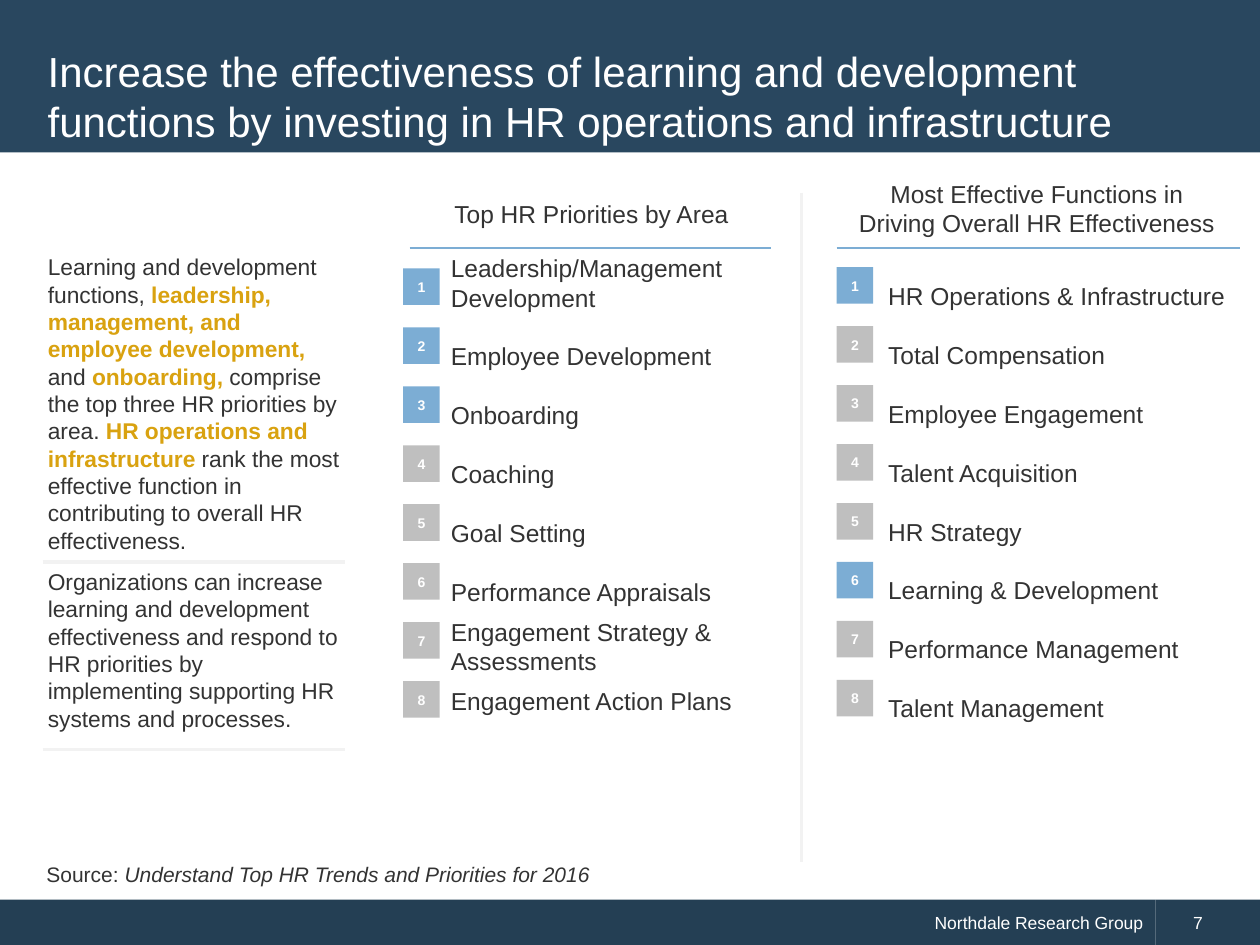
from dataclasses import dataclass

from lxml.etree import SubElement
from pptx import Presentation
from pptx.dml.color import RGBColor
from pptx.enum.shapes import MSO_CONNECTOR, MSO_SHAPE
from pptx.enum.text import MSO_ANCHOR, PP_ALIGN
from pptx.oxml.ns import qn
from pptx.util import Inches, Pt


@dataclass(frozen=True)
class Theme:
    font: str = "Arial"
    banner: str = "29475F"
    footer: str = "243F54"
    accent: str = "7CADD4"
    muted: str = "BFBFBF"
    divider: str = "F2F2F2"
    text: str = "333333"
    highlight: str = "D9A210"
    white: str = "FFFFFF"
    title_size: int = 24
    list_size: int = 14
    body_size: int = 13
    source_size: int = 12
    footer_size: int = 10
    badge_size: int = 8


THEME = Theme()

# Each paragraph is (runs, paragraph format); each run is (text, font format)
PRIORITIES = [
    ("Leadership/Management Development", {}),
    ("Employee Development", {"line_spacing": 2.0}),
    ("Onboarding", {"line_spacing": 2.0}),
    ("Coaching", {"line_spacing": 2.0}),
    ("Goal Setting", {"line_spacing": 2.0}),
    ("Performance Appraisals", {"line_spacing": 2.0, "space_after": Pt(6)}),
    ("Engagement Strategy & Assessments", {"space_after": Pt(6)}),
    ("Engagement Action Plans", {}),
]
FUNCTIONS = [(name, {"line_spacing": 2.0}) for name in (
    "HR Operations & Infrastructure", "Total Compensation",
    "Employee Engagement", "Talent Acquisition", "HR Strategy",
    "Learning & Development", "Performance Management", "Talent Management")]

STRONG = {"bold": True, "color": THEME.highlight}
SUMMARY = [
    ([("Learning and development functions, ", {}),
      ("leadership, management, and employee development, ", STRONG),
      ("and ", {}),
      ("onboarding, ", STRONG),
      ("comprise the top three HR priorities by area.", {}),
      (" HR operations and infrastructure ", STRONG),
      ("rank the most effective function in contributing to overall HR "
       "effectiveness.", {})], {"space_after": Pt(8)}),
    ("Organizations can increase learning and development effectiveness and "
     "respond to HR priorities by implementing supporting HR systems and "
     "processes.", {"space_after": Pt(8)}),
]


def apply_format(target, values):
    for name, value in values.items():
        setattr(target, name, value)


def write_text(shape, paragraphs, size, color=THEME.text, bold=False,
               align=PP_ALIGN.LEFT, anchor=MSO_ANCHOR.TOP, side=0.1,
               wrap=True):
    """Fill a shape with paragraphs; side is the left and right inset."""
    frame = shape.text_frame
    apply_format(frame, {
        "word_wrap": wrap, "vertical_anchor": anchor,
        "margin_left": Inches(side), "margin_right": Inches(side),
        "margin_top": Inches(0.05), "margin_bottom": Inches(0.05)})
    for index, (runs, paragraph_format) in enumerate(paragraphs):
        paragraph = frame.add_paragraph() if index else frame.paragraphs[0]
        apply_format(paragraph, {"alignment": align, **paragraph_format})
        for text, font_format in ([(runs, {})] if isinstance(runs, str) else runs):
            run = paragraph.add_run()
            run.text = text
            values = {"name": THEME.font, "size": Pt(size), "bold": bold,
                      "color": color, **font_format}
            run.font.color.rgb = RGBColor.from_string(values.pop("color"))
            apply_format(run.font, values)


def add_text(slide, box, paragraphs, size, **options):
    shape = slide.shapes.add_textbox(*map(Inches, box))
    write_text(shape, paragraphs, size, **options)


def add_block(slide, box, fill):
    shape = slide.shapes.add_shape(MSO_SHAPE.RECTANGLE, *map(Inches, box))
    shape.shadow.inherit = False
    shape.fill.solid()
    shape.fill.fore_color.rgb = RGBColor.from_string(fill)
    shape.line.fill.background()
    return shape


def add_line(slide, start, end, color, width):
    line = slide.shapes.add_connector(
        MSO_CONNECTOR.STRAIGHT, *map(Inches, (*start, *end)))
    line.line.color.rgb = RGBColor.from_string(color)
    line.line.width = Pt(width)
    SubElement(line._element.spPr, qn("a:effectLst"))


def add_badges(slide, left, top, highlighted, count=8, pitch=0.468, side=0.29):
    for number in range(1, count + 1):
        fill = THEME.accent if number in highlighted else THEME.muted
        box = (left, top + (number - 1) * pitch, side, side)
        write_text(add_block(slide, box, fill), [(str(number), {})],
                   THEME.badge_size, color=THEME.white, bold=True,
                   align=PP_ALIGN.CENTER, anchor=MSO_ANCHOR.MIDDLE, side=0)


def add_heading(slide, box, text, rule_left, rule_right):
    add_text(slide, box, [(text, {})], THEME.list_size,
             align=PP_ALIGN.CENTER, side=0)
    add_line(slide, (rule_left, 1.97), (rule_right, 1.97), THEME.accent, 1.5)


def add_frame(slide):
    # Footer with publisher and slide number
    footer = {"color": THEME.white, "anchor": MSO_ANCHOR.MIDDLE}
    publisher = add_block(slide, (0, 7.14, 9.17, 0.37), THEME.footer)
    write_text(publisher, [("Northdale Research Group", {})],
               THEME.footer_size, align=PP_ALIGN.RIGHT, **footer)
    number = add_block(slide, (9.17, 7.14, 0.83, 0.37), THEME.footer)
    write_text(number, [("7", {})], THEME.footer_size, side=0.3, **footer)
    # Title banner
    add_block(slide, (0, -0.02, 10, 1.23), THEME.banner)
    add_text(slide, (0.28, 0.28, 9.43, 0.96),
             [("Increase the effectiveness of learning and development "
               "functions by investing in HR operations and infrastructure", {})],
             THEME.title_size, color=THEME.white, anchor=MSO_ANCHOR.MIDDLE)


def main():
    presentation = Presentation()
    apply_format(presentation, {"slide_width": Inches(10),
                                "slide_height": Inches(7.5)})
    slide = presentation.slides.add_slide(presentation.slide_layouts[6])
    add_frame(slide)

    # Summary column
    add_text(slide, (-0.01, 1.96, 3.1, 4.47), SUMMARY, THEME.body_size, side=0.39)
    for top in (4.46, 5.95):
        add_line(slide, (0.34, top), (2.74, top), THEME.divider, 2)

    # Priorities column
    add_heading(slide, (3.25, 1.53, 2.89, 0.34), "Top HR Priorities by Area",
                3.25, 6.12)
    add_text(slide, (3.48, 1.96, 2.77, 3.89), PRIORITIES, THEME.list_size)
    add_badges(slide, 3.2, 2.13, {1, 2, 3})

    # Effective functions column
    add_line(slide, (6.36, 1.53), (6.36, 6.84), THEME.divider, 2)
    add_heading(slide, (6.75, 1.37, 2.96, 0.57),
                "Most Effective Functions in Driving Overall HR Effectiveness",
                6.64, 9.84)
    add_text(slide, (6.95, 1.95, 2.89, 3.87), FUNCTIONS, THEME.list_size,
             wrap=False)
    add_badges(slide, 6.64, 2.12, {1, 6})

    # Source note
    add_text(slide, (0.27, 6.79, 5.33, 0.3),
             [([("Source: ", {}),
                ("Understand Top HR Trends and Priorities for 2016",
                 {"italic": True})], {})], THEME.source_size)

    presentation.save("out.pptx")


if __name__ == "__main__":
    main()
